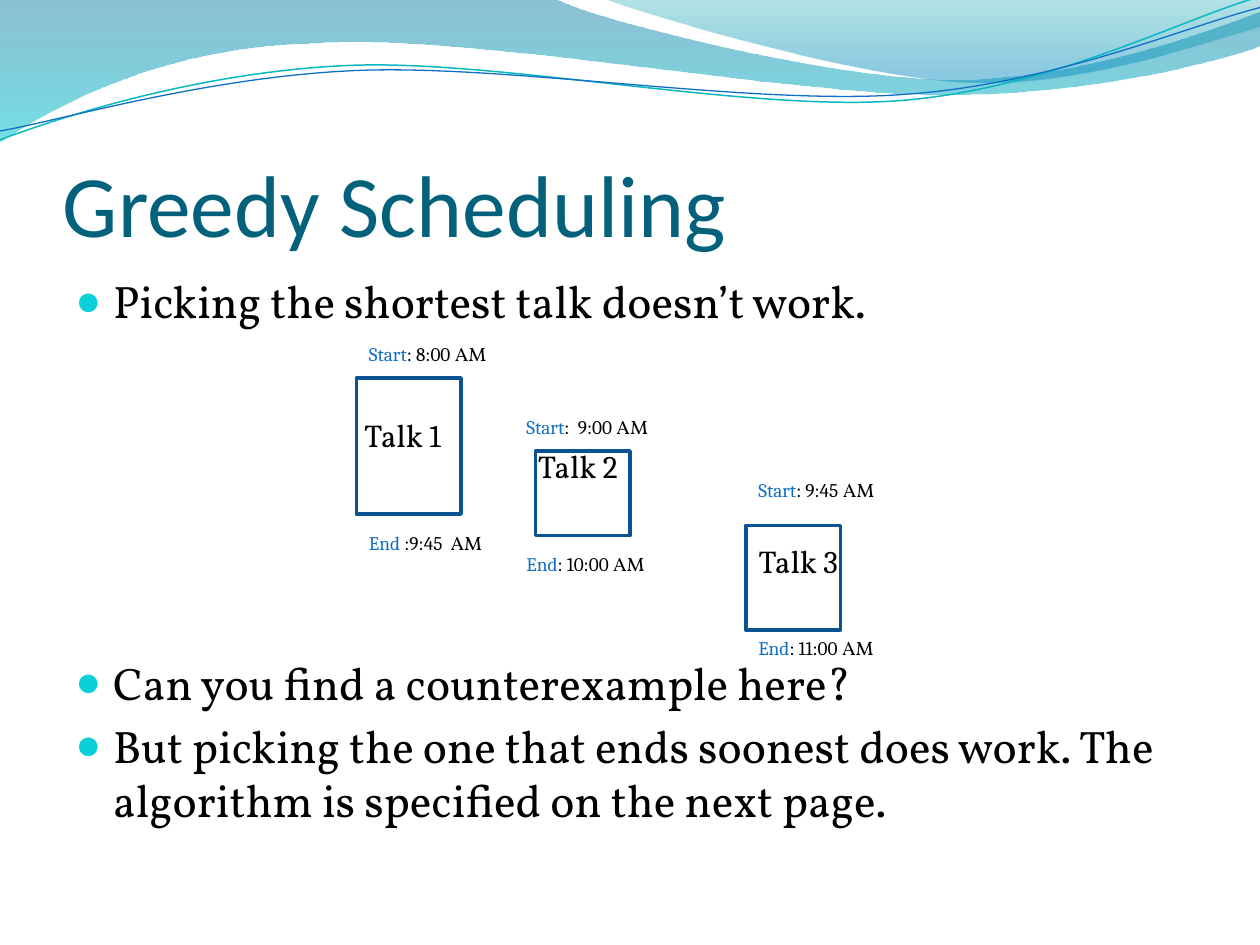
from dataclasses import dataclass
from lxml.etree import SubElement as Sub
from pptx import Presentation
from pptx.dml.color import RGBColor as RGB
from pptx.enum.shapes import MSO_SHAPE as Kind
from pptx.enum.text import MSO_ANCHOR as Anchor, MSO_AUTO_SIZE as Fit
from pptx.oxml.ns import qn
from pptx.util import Inches, Pt


@dataclass(frozen=True)
class Theme:
    title: str = "04617B"
    ink: str = "000000"
    accent: str = "0F6FC6"
    teal: str = "0AB8BF"
    edge: str = "0B5292"
    dot: str = "0BD0D9"
    head: str = "Calibri"
    body: str = "Vollkorn"
    digit: str = "Cambria"
    big: float = 50
    mid: float = 26
    name: float = 18
    small: float = 11


@dataclass(frozen=True)
class Stop:
    pos: int
    color: str
    alpha: int


@dataclass(frozen=True)
class Wave:
    """Path of points; each step holds one point (line) or three (curve)."""
    start: tuple
    steps: tuple
    stops: tuple = ()
    line: str = ""
    width: float = 0


@dataclass(frozen=True)
class Talk:
    box: tuple
    label: tuple
    text: tuple
    start: tuple
    begin: tuple
    end: tuple
    finish: tuple


T = Theme()

WAVES = (
    Wave((0, 0), (
        (4.4, -0.01),
        (4.76, 0.17, 6.64, 0.63, 7.58, 0.63), (8.53, 0.63, 9.58, 0.26, 10, 0.09),
        (10.01, 0.36),
        (9.83, 0.44, 8.7, 0.76, 7.46, 0.75), (6.22, 0.75, 3.82, 0.28, 2.57, 0.34),
        (1.29, 0.36, 0.46, 0.83, -0.01, 1.13), (0, 0)),
        stops=(Stop(0, "0074A1", 45), Stop(100, "00C6CF", 55))),
    Wave((4.79, -0.01), (
        (5.09, 0.11, 6.82, 0.62, 7.69, 0.65), (8.56, 0.69, 9.61, 0.32, 10, 0.21),
        (10, 0), (4.79, -0.01)),
        stops=(Stop(0, "00A1A9", 30), Stop(80, "008BBF", 45))),
    Wave((0, 1.11), (
        (0.48, 0.93, 1.58, 0.57, 2.77, 0.52), (3.95, 0.47, 5.93, 0.89, 7.13, 0.8),
        (8.33, 0.71, 9.38, 0.15, 9.98, -0.02)),
        line=T.teal, width=0.85),
    Wave((0, 1.04), (
        (0.47, 0.96, 1.64, 0.61, 2.83, 0.56), (4.03, 0.51, 5.97, 0.84, 7.17, 0.75),
        (8.36, 0.67, 9.41, 0.21, 10, 0.06)),
        line=T.accent, width=0.75),
)

TALKS = (
    Talk((2.83, 3, 0.83, 1.08), (2.75, 3.25), (" Talk ", "1"),
         (2.83, 2.67), (": 8:00 ", "AM"), (2.83, 4.17), (" :9:45 ", " AM")),
    Talk((4.25, 3.58, 0.75, 0.67), (4.17, 3.5), ("Talk ", "2"),
         (4.08, 3.25), (":  9:00 ", "AM"), (4.08, 4.33), (": 10:00 ", "AM")),
    Talk((5.92, 4.17, 0.75, 0.83), (5.92, 4.25), ("Talk ", "3"),
         (5.92, 3.75), (": 9:45 ", "AM"), (5.92, 5), (": 11:00 ", "AM")),
)

# Each point with the space before it; the wide one leaves room for the talks.
POINTS = (
    ("Picking the shortest talk doesn’t work.", 5),
    ("Can you find a counterexample here?", 186.8),
    ("But picking the one that ends soonest does work. "
     "The algorithm is specified on the next page.", 4.8),
)


def curve(shape, steps: tuple) -> None:
    """Turn each three-point step of the outline into one Bézier curve."""
    lines = iter(list(shape._element.iter(qn("a:lnTo"))))
    for step in steps:
        first = next(lines)
        if len(step) == 2:
            continue
        first.tag = qn("a:cubicBezTo")
        for _ in range(2):
            other = next(lines)
            first.append(other[0])
            other.getparent().remove(other)


def shade(shape, stops: tuple) -> None:
    """Fill top to bottom with see-through stops."""
    shape.fill.gradient()
    grad = shape._element.spPr.find(qn("a:gradFill"))
    for child in list(grad):
        grad.remove(child)
    group = Sub(grad, qn("a:gsLst"))
    for stop in stops:
        mark = Sub(group, qn("a:gs"), pos=str(stop.pos * 1000))
        color = Sub(mark, qn("a:srgbClr"), val=stop.color)
        Sub(color, qn("a:alpha"), val=str(stop.alpha * 1000))
    Sub(grad, qn("a:lin"), ang="5400000", scaled="0")


def draw_wave(slide, wave: Wave) -> None:
    pts = [(Inches(step[i]), Inches(step[i + 1]))
           for step in (wave.start, *wave.steps) for i in range(0, len(step), 2)]
    form = slide.shapes.build_freeform(*pts[0])
    form.add_line_segments(pts[1:], close=bool(wave.stops))
    shape = form.convert_to_shape()
    curve(shape, wave.steps)
    shape.shadow.inherit = False
    if wave.stops:
        shade(shape, wave.stops)
        shape.line.fill.background()
    else:
        shape.fill.background()
        shape.line.color.rgb = RGB.from_string(wave.line)
        shape.line.width = Pt(wave.width)


def style(font, face: str, size: float, color: str) -> None:
    font.name, font.size = face, Pt(size)
    font.color.rgb = RGB.from_string(color)


def add_text(slide, left: float, top: float, wide: float, high: float):
    box = slide.shapes.add_textbox(*map(Inches, (left, top, wide, high)))
    box.text_frame.word_wrap = True
    return box.text_frame


def add_label(slide, spot: tuple, size: tuple, points: float, parts: tuple) -> None:
    """One line whose parts are (text, face, color)."""
    frame = add_text(slide, *spot, *size)
    frame.auto_size = Fit.SHAPE_TO_FIT_TEXT
    for text, face, color in parts:
        run = frame.paragraphs[0].add_run()
        run.text = text
        style(run.font, face, points, color)


def draw_talk(slide, talk: Talk) -> None:
    box = slide.shapes.add_shape(Kind.RECTANGLE, *map(Inches, talk.box))
    box.shadow.inherit = False
    box.fill.background()
    box.line.color.rgb = RGB.from_string(T.edge)
    box.line.width = Pt(2)
    word, digit = talk.text
    add_label(slide, talk.label, (0.92, 0.4), T.name,
              ((word, T.body, T.ink), (digit, T.digit, T.ink)))
    for key, spot, (time, half) in (("Start", talk.start, talk.begin),
                                    ("End", talk.end, talk.finish)):
        add_label(slide, spot, (1.83, 0.29), T.small,
                  ((key, T.digit, T.accent), (time, T.digit, T.ink),
                   (half, T.body, T.ink)))


def add_title(slide, text: str) -> None:
    frame = add_text(slide, 0.5, 0.77, 9, 1.25)
    frame.vertical_anchor = Anchor.BOTTOM
    frame.margin_left = frame.margin_right = frame.margin_bottom = 0
    para = frame.paragraphs[0]
    para.text = text
    style(para.font, T.head, T.big, T.title)


def add_points(slide) -> None:
    frame = add_text(slide, 0.5, 2.12, 9, 4.8)
    for i, (text, gap) in enumerate(POINTS):
        para = frame.add_paragraph() if i else frame.paragraphs[0]
        para.text = text
        para.space_before = Pt(gap)
        props = para._p.get_or_add_pPr()
        props.set("marL", str(Inches(0.3)))
        props.set("indent", str(-Inches(0.3)))
        Sub(Sub(props, qn("a:buClr")), qn("a:srgbClr"), val=T.dot)
        Sub(props, qn("a:buSzPct"), val="95000")
        Sub(props, qn("a:buFont"), typeface="Arial")
        Sub(props, qn("a:buChar"), char="●")
        style(para.font, T.body, T.mid, T.ink)


def main() -> None:
    deck = Presentation()
    deck.slide_width, deck.slide_height = Inches(10), Inches(7.5)
    slide = deck.slides.add_slide(deck.slide_layouts[6])
    for wave in WAVES:
        draw_wave(slide, wave)
    add_title(slide, "Greedy Scheduling")
    add_points(slide)
    for talk in TALKS:
        draw_talk(slide, talk)
    deck.save("out.pptx")


if __name__ == "__main__":
    main()
